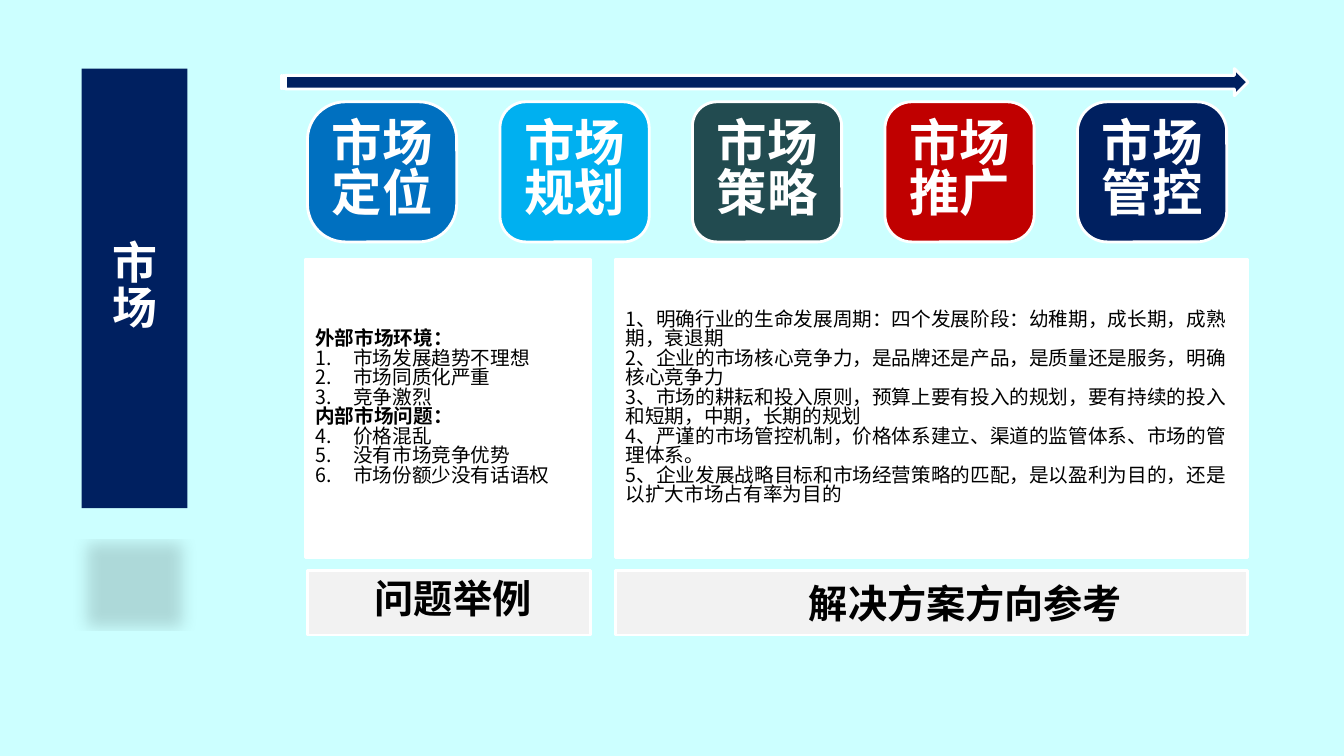
from lxml import etree
from pptx import Presentation
from pptx.dml.color import RGBColor
from pptx.enum.shapes import MSO_SHAPE
from pptx.enum.text import MSO_ANCHOR, PP_ALIGN
from pptx.oxml.ns import qn
from pptx.util import Pt

RECT = MSO_SHAPE.RECTANGLE
ROUNDED = MSO_SHAPE.ROUNDED_RECTANGLE
ARROW = MSO_SHAPE.STRIPED_RIGHT_ARROW
LEFT, CENTER = PP_ALIGN.LEFT, PP_ALIGN.CENTER
MIDDLE = MSO_ANCHOR.MIDDLE

FONT = "Noto Sans CJK SC"
LINE_SPACING = 0.83
NAVY, WHITE, BLACK, GREY, BACKGROUND = "002060", "FFFFFF", "000000", "F2F2F2", "CCFFFF"

TILES = [  # text, fill, corner radius
    ("市场定位", "0070C0", 0.27),
    ("市场规划", "00B0F0", 0.185),
    ("市场策略", "224B50", 0.174),
    ("市场推广", "C00000", 0.191),
    ("市场管控", NAVY, 0.213),
]
PROBLEMS = [
    ("外部市场环境：", ["市场发展趋势不理想", "市场同质化严重", "竞争激烈"]),
    ("内部市场问题：", ["价格混乱", "没有市场竞争优势", "市场份额少没有话语权"]),
]
SOLUTIONS = [
    "1、明确行业的生命发展周期：四个发展阶段：幼稚期，成长期，成熟期，衰退期",
    "2、企业的市场核心竞争力，是品牌还是产品，是质量还是服务，明确核心竞争力",
    "3、市场的耕耘和投入原则，预算上要有投入的规划，要有持续的投入和短期，中期，长期的规划",
    "4、严谨的市场管控机制，价格体系建立、渠道的监管体系、市场的管理体系。",
    "5、企业发展战略目标和市场经营策略的匹配，是以盈利为目的，还是以扩大市场占有率为目的",
]
HEADINGS = [  # text, text box, panel behind it
    ("问题举例", (259.9, 409.7, 127.4, 41), (219.6, 407.5, 202.3, 46.1)),
    ("解决方案方向参考", (541.4, 412.6, 296.6, 41), (439.9, 407.5, 451.4, 46.1)),
]
PROBLEM_BOX = (218.2, 185, 203.8, 213.1)
SOLUTION_BOX = (439.9, 185, 451.4, 213.1)
BAR_BOX = (58.3, 49, 75.6, 313.9)
ARROW_BOX = (200.9, 49, 690.5, 19.4)
TILE_LEFT, TILE_TOP, TILE_W, TILE_H, TILE_STEP = 219.6, 72.7, 106.6, 100.1, 137.5


def rgb(value):
    return RGBColor.from_string(value)


def add_block(kind, box, fill, line=WHITE, radius=None):
    sp = slide.shapes.add_shape(kind, *map(Pt, box))
    sp.shadow.inherit = False
    sp.fill.solid()
    sp.fill.fore_color.rgb = rgb(fill)
    if line:
        sp.line.color.rgb = rgb(line)
        sp.line.width = Pt(2)
    else:
        sp.line.fill.background()
    if radius is not None:
        sp.adjustments[0] = radius
    return sp


def write(sp, lines, size, color=BLACK, align=CENTER):
    """Fill a shape with (text, bold, number) lines; number is None for plain lines."""
    tf = sp.text_frame
    tf.word_wrap = True
    tf.vertical_anchor = MIDDLE
    for i, (text, bold, number) in enumerate(lines):
        p = tf.paragraphs[0] if i == 0 else tf.add_paragraph()
        p.text = text
        p.alignment = align
        p.line_spacing = LINE_SPACING
        if number:
            set_number(p, number)
        r = p.runs[0]
        r.font.size = Pt(size)
        r.font.bold = bold
        r.font.name = FONT
        r.font.color.rgb = rgb(color)
        r.font._element.find(qn("a:latin")).addnext(
            r.font._element.makeelement(qn("a:ea"), {"typeface": FONT}))


def set_number(p, number):
    pPr = p._p.get_or_add_pPr()
    pPr.set("marL", str(Pt(27)))
    pPr.set("indent", str(Pt(-27)))
    etree.SubElement(pPr, qn("a:buFont"), typeface=FONT)
    etree.SubElement(pPr, qn("a:buAutoNum"), type="arabicPeriod", startAt=str(number))


def add_cast_shadow(sp):
    """Add a blurred, flattened shadow below the shape."""
    effects = sp._element.spPr.find(qn("a:effectLst"))
    shadow = etree.SubElement(
        effects, qn("a:outerShdw"), blurRad=str(Pt(12)), dist=str(Pt(25)),
        dir="5400000", sx="90000", sy="-19000", rotWithShape="0")
    color = etree.SubElement(shadow, qn("a:srgbClr"), val=BLACK)
    etree.SubElement(color, qn("a:alpha"), val="15000")


prs = Presentation()
prs.slide_width, prs.slide_height = Pt(960), Pt(540)
slide = prs.slides.add_slide(prs.slide_layouts[6])
slide.background.fill.solid()
slide.background.fill.fore_color.rgb = rgb(BACKGROUND)

for text, text_box, panel_box in HEADINGS:
    add_block(RECT, panel_box, GREY)
    write(slide.shapes.add_textbox(*map(Pt, text_box)), [(text, True, None)], 28)

problem_lines = []
number = 0
for title, items in PROBLEMS:
    problem_lines.append((title, True, None))
    for item in items:
        number += 1
        problem_lines.append((item, False, number))
write(add_block(ROUNDED, PROBLEM_BOX, WHITE, radius=0), problem_lines, 14, align=LEFT)
write(add_block(ROUNDED, SOLUTION_BOX, WHITE, radius=0),
      [(text, False, None) for text in SOLUTIONS], 14, align=LEFT)

bar = add_block(RECT, BAR_BOX, NAVY, line=None)
add_cast_shadow(bar)
write(bar, [("市场", True, None)], 32, WHITE)

for i, (text, fill, radius) in enumerate(TILES):
    box = (TILE_LEFT + i * TILE_STEP, TILE_TOP, TILE_W, TILE_H)
    write(add_block(ROUNDED, box, fill, radius=radius), [(text, True, None)], 36, WHITE)

add_block(ARROW, ARROW_BOX, NAVY)

prs.save("out.pptx")
